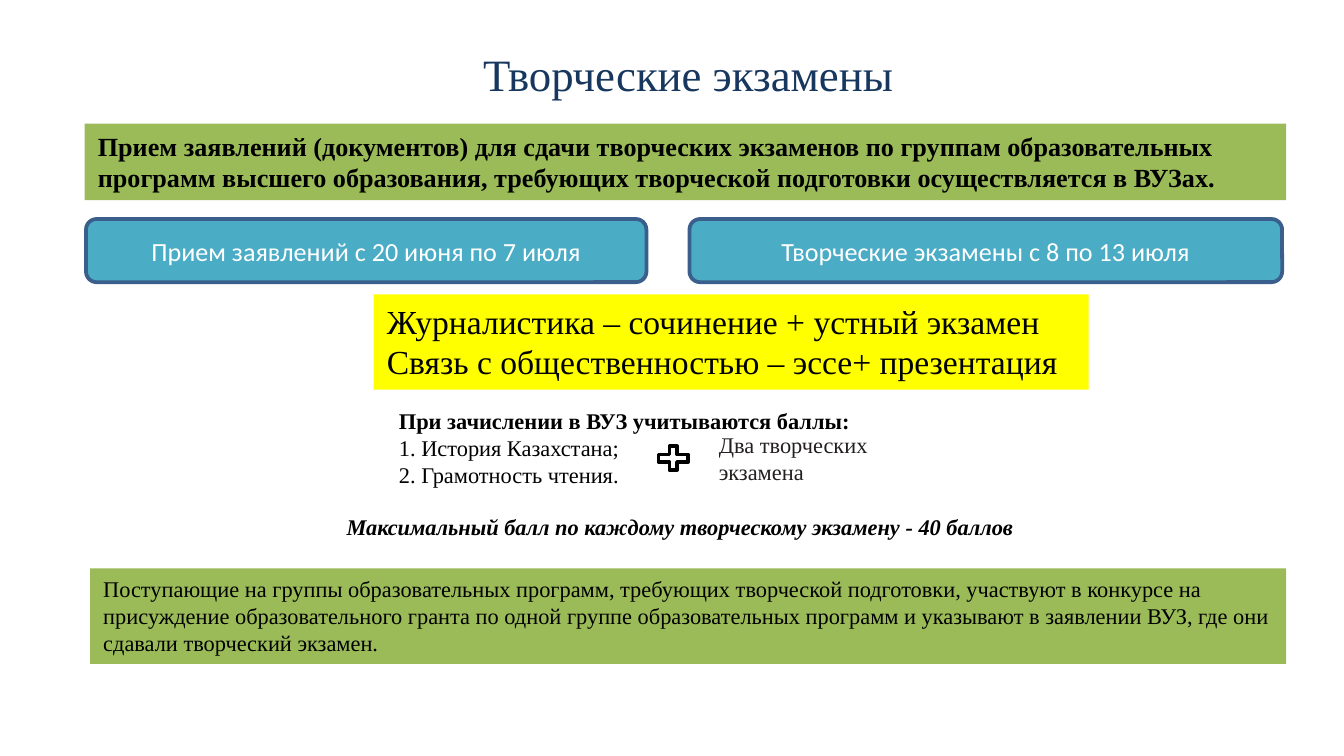
from pptx import Presentation
from pptx.dml.color import RGBColor
from pptx.enum.shapes import MSO_SHAPE
from pptx.enum.text import MSO_ANCHOR, PP_ALIGN
from pptx.util import Inches, Pt

RECT = MSO_SHAPE.RECTANGLE
ROUND = MSO_SHAPE.ROUNDED_RECTANGLE
PLUS = MSO_SHAPE.MATH_PLUS
TOP, MIDDLE = MSO_ANCHOR.TOP, MSO_ANCHOR.MIDDLE
LEFT, CENTER = PP_ALIGN.LEFT, PP_ALIGN.CENTER
SERIF, SANS = "Times New Roman", "Calibri"
GREEN, TEAL, YELLOW = "9BBB59", "4BACC6", "FFFF00"
WIDTH = 10
HEIGHT = WIDTH * 9 / 16


def color(value):
    """Turn a hex string into a colour."""
    return RGBColor.from_string(value)


def write(shape, lines, size, ink="000000", font=SERIF, bold=(), italic=False,
          align=LEFT, anchor=TOP):
    """Fill a shape with paragraphs; bold holds the numbers of the bold ones."""
    frame = shape.text_frame
    frame.word_wrap = True
    frame.vertical_anchor = anchor
    frame.text = "\n".join(lines)
    for i, para in enumerate(frame.paragraphs):
        para.alignment = align
        para.font.name = font
        para.font.size = Pt(size)
        para.font.bold = i in bold
        para.font.italic = italic
        para.font.color.rgb = color(ink)


def add_box(slide, box, fill, kind=RECT, line=None):
    """Add a filled shape, outlined when a line colour is given."""
    shape = slide.shapes.add_shape(kind, *map(Inches, box))
    shape.shadow.inherit = False
    shape.fill.solid()
    shape.fill.fore_color.rgb = color(fill)
    if line:
        shape.line.color.rgb = color(line)
        shape.line.width = Pt(2)
    else:
        shape.line.fill.background()
    return shape


def add_text(slide, box, lines, size, **style):
    """Add a text box."""
    write(slide.shapes.add_textbox(*map(Inches, box)), lines, size, **style)


def add_title(slide, box, text):
    """Place and format the title."""
    title = slide.shapes.title
    title.left, title.top, title.width, title.height = map(Inches, box)
    write(title, [text], 24, ink="17375E", align=CENTER)


def add_panel(slide, box, fill, lines, size, **style):
    """Add a coloured panel with text."""
    write(add_box(slide, box, fill), lines, size, **style)


def add_date(slide, box, text):
    """Add a rounded badge with a date range."""
    badge = add_box(slide, box, TEAL, ROUND, "3A5F8C")
    write(badge, [text], 14, ink="FFFFFF", font=SANS, align=CENTER, anchor=MIDDLE)


def add_scores(slide, left, top):
    """Add the scores block: subjects, plus sign, creative exams, maximum."""
    add_text(slide, (left + 0.39, top, 4.17, 1.01), [
        "При зачислении в ВУЗ учитываются баллы:",
        "1. История Казахстана;",
        "2. Грамотность чтения.",
    ], 12, bold=(0,))
    add_text(slide, (left + 2.77, top + 0.18, 1.89, 0.5),
             ["Два творческих экзамена"], 12, ink="231F1F")
    add_box(slide, (left + 2.38, top + 0.31, 0.3, 0.24), "FFFFFF", PLUS, "000000")
    add_text(slide, (left, top + 0.79, 5.35, 0.3),
             ["Максимальный балл по каждому творческому экзамену - 40 баллов"],
             12, bold=(0,), italic=True)


def main():
    """Build the slide and save it."""
    deck = Presentation()
    deck.slide_width, deck.slide_height = Inches(WIDTH), Inches(HEIGHT)
    slide = deck.slides.add_slide(deck.slide_layouts[5])
    add_title(slide, (0.67, 0.3, 8.9, 0.5), "Творческие экзамены")
    add_panel(slide, (0.63, 0.92, 8.94, 0.57), GREEN, [
        "Прием заявлений (документов) для сдачи творческих экзаменов по группам "
        "образовательных программ высшего образования, требующих творческой "
        "подготовки осуществляется в ВУЗах."], 14, bold=(0,))
    add_date(slide, (0.64, 1.63, 4.17, 0.47), "Прием заявлений с 20 июня по 7 июля")
    add_date(slide, (5.13, 1.63, 4.41, 0.47), "Творческие экзамены с 8 по 13 июля")
    add_panel(slide, (2.78, 2.19, 5.32, 0.71), YELLOW, [
        "Журналистика – сочинение + устный экзамен",
        "Связь с общественностью – эссе+ презентация"], 18)
    add_scores(slide, 2.48, 2.98)
    add_panel(slide, (0.67, 4.23, 8.9, 0.71), GREEN, [
        "Поступающие на группы образовательных программ, требующих творческой "
        "подготовки, участвуют в конкурсе на присуждение образовательного гранта "
        "по одной группе образовательных программ и указывают в заявлении ВУЗ, "
        "где они сдавали творческий экзамен."], 12)
    deck.save("out.pptx")


if __name__ == "__main__":
    main()
